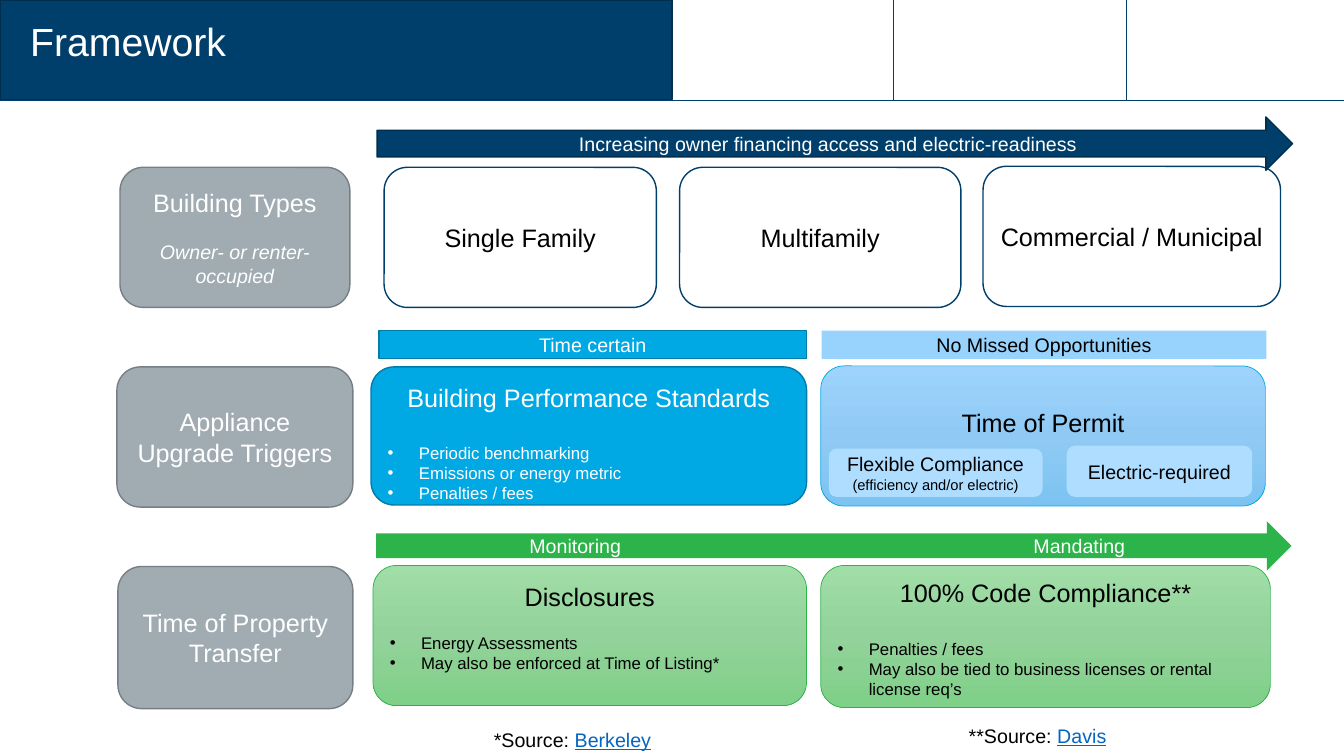
import copy

import lxml.etree
import pptx
import pptx.dml.color
import pptx.enum.shapes
import pptx.enum.text
import pptx.oxml.ns
import pptx.util

Inches = pptx.util.Inches
Pt = pptx.util.Pt
RGBColor = pptx.dml.color.RGBColor
KIND = pptx.enum.shapes.MSO_SHAPE
ALIGN = pptx.enum.text.PP_ALIGN
ANCHOR = pptx.enum.text.MSO_ANCHOR
qn = pptx.oxml.ns.qn

WHITE = RGBColor(0xFF, 0xFF, 0xFF)
BLACK = RGBColor(0x00, 0x00, 0x00)
NAVY = RGBColor(0x00, 0x3E, 0x6B)
DARK = RGBColor(0x00, 0x2E, 0x4F)
GREY = RGBColor(0xA1, 0xAB, 0xB2)
SLATE = RGBColor(0x77, 0x7F, 0x84)
BLUE = RGBColor(0x00, 0xA8, 0xE4)
TEAL = RGBColor(0x00, 0x7C, 0xA9)
SKY = RGBColor(0x98, 0xD3, 0xFD)
PALE = RGBColor(0xAE, 0xDD, 0xFF)
GREEN = RGBColor(0x2C, 0xB3, 0x4A)
LINK = RGBColor(0x05, 0x63, 0xC1)
LEAVES = [RGBColor(0xA0, 0xDD, 0xA7), RGBColor(0x93, 0xD2, 0x9A), RGBColor(0x7F, 0xD0, 0x88)]
SKIES = [RGBColor(0x9D, 0xD3, 0xFC), RGBColor(0x90, 0xCA, 0xF4), RGBColor(0x7C, 0xC3, 0xF2)]


def say(para, text, size=18, color=BLACK, align=ALIGN.CENTER, gap=0,
        bullet=False, italic=False, under=False):
    """Add a run of text to a paragraph and format both."""
    if bullet:
        props = para._p.get_or_add_pPr()
        props.set("marL", str(Inches(0.31)))
        props.set("indent", str(-Inches(0.31)))
        lxml.etree.SubElement(props, qn("a:buFont")).set("typeface", "Arial")
        lxml.etree.SubElement(props, qn("a:buChar")).set("char", "•")
    para.alignment = align
    para.space_before = Pt(gap)
    run = para.add_run()
    run.text = text
    font = run.font
    font.name, font.size, font.color.rgb = "Arial", Pt(size), color
    font.italic, font.underline = italic, under


def blend(fill, colors):
    """Fill from top to bottom through three colours."""
    fill.gradient()
    fill.gradient_angle = 270
    first = fill.gradient_stops[0]._gs
    first.addnext(copy.deepcopy(first))
    for i, (stop, color) in enumerate(zip(fill.gradient_stops, colors)):
        stop.position = i / 2
        stop.color.rgb = color


def draw(shapes, kind, box, fill, line=None, width=1, pad=0.1, top=None):
    """Add a shape; a top inset anchors its text to the top."""
    shape = shapes.add_shape(kind, *map(Inches, box))
    shape.shadow.inherit = False
    if isinstance(fill, list):
        blend(shape.fill, fill)
    else:
        shape.fill.solid()
        shape.fill.fore_color.rgb = fill
    if line is None:
        shape.line.fill.background()
    else:
        shape.line.color.rgb = line
        shape.line.width = Pt(width)
    frame = shape.text_frame
    frame.word_wrap = True
    frame.margin_left = frame.margin_right = Inches(pad)
    frame.margin_top, frame.margin_bottom = Inches(top or 0), 0
    frame.vertical_anchor = ANCHOR.MIDDLE if top is None else ANCHOR.TOP
    return shape


def label(shapes, kind, box, text, fill, line=None, color=WHITE, size=18, **look):
    """Add a shape with one centred text."""
    shape = draw(shapes, kind, box, fill, line, **look)
    say(shape.text_frame.paragraphs[0], text, size=size, color=color)
    return shape


def rule(shapes, start, end):
    line = shapes.add_connector(pptx.enum.shapes.MSO_CONNECTOR.STRAIGHT,
                                *map(Inches, start + end))
    line.line.color.rgb = NAVY
    line.line.width = Pt(0.5)
    lxml.etree.SubElement(line._element.spPr, qn("a:effectLst"))


def header(slide, box):
    x, y, w, h = box
    base = y + h
    rule(slide.shapes, (x, base), (x + w, base))
    for mark in (8.86, 11.17):
        rule(slide.shapes, (x + mark, y), (x + mark, base))
    band = draw(slide.shapes, KIND.RECTANGLE, (x, y, w / 2, h - 0.01), NAVY, DARK)
    # Title sits in front of its band
    title = slide.shapes.title
    title._element.addprevious(band._element)
    title.left, title.top = Inches(x + 0.2), Inches(y + 0.17)
    title.width, title.height = Inches(6.43), Inches(0.7)
    title.text_frame.vertical_anchor = ANCHOR.TOP
    para = title.text_frame.paragraphs[0]
    para.line_spacing = 0.9
    say(para, "Framework", size=28, color=WHITE, align=ALIGN.LEFT)


def types(shapes, box):
    x, y, w, h = box
    # Row name
    name = label(shapes, KIND.ROUNDED_RECTANGLE, (x, y + 0.5, 2.28, 1.39),
                 "Building Types", GREY, SLATE)
    say(name.text_frame.add_paragraph(), "Owner- or renter-occupied",
        size=14, color=WHITE, gap=16, italic=True)
    # Kinds of building
    for text, dx, dy, wide in (("Single Family", 2.62, 0.5, 2.7),
                               ("Multifamily", 5.55, 0.5, 2.79),
                               ("Commercial / Municipal", 8.56, 0.49, 2.95)):
        label(shapes, KIND.ROUNDED_RECTANGLE, (x + dx, y + dy, wide, 1.39),
              text, WHITE, NAVY, color=BLACK, pad=0.05)
    # Trend arrow
    label(shapes, KIND.RIGHT_ARROW, (x + 2.55, y, w - 2.55, 0.53),
          "Increasing owner financing access and electric-readiness",
          NAVY, DARK, size=14)


def card(shapes, box, title, points, fill, line, color=BLACK, gap=21, **look):
    """Add a rounded card with a title and a bullet list."""
    shape = label(shapes, KIND.ROUNDED_RECTANGLE, box, title, fill, line, color=color, **look)
    for i, point in enumerate(points):
        say(shape.text_frame.add_paragraph(), point, size=12, color=color,
            align=ALIGN.LEFT, gap=0 if i else gap, bullet=True)


def triggers(shapes, box):
    x, y, w, h = box
    label(shapes, KIND.ROUNDED_RECTANGLE, (x, y + 0.36, 2.34, 1.39),
          "Appliance Upgrade Triggers", GREY, SLATE)
    # Standards
    card(shapes, (x + 2.52, y + 0.36, 4.32, 1.37), "Building Performance Standards",
         ["Periodic benchmarking", "Emissions or energy metric", "Penalties / fees"],
         BLUE, TEAL, color=WHITE, top=0.09)
    label(shapes, KIND.RECTANGLE, (x + 2.6, y, 4.24, 0.28), "Time certain",
          BLUE, TEAL, size=14)
    # Permit
    label(shapes, KIND.RECTANGLE, (x + 6.99, y, 4.41, 0.28), "No Missed Opportunities",
          SKY, color=BLACK, size=14)
    group = shapes.add_group_shape().shapes
    label(group, KIND.ROUNDED_RECTANGLE, (x + 6.98, y + 0.35, 4.41, 1.39), "Time of Permit",
          SKIES, BLUE, color=BLACK, width=0.5, top=0.34)
    flex = label(group, KIND.ROUNDED_RECTANGLE, (x + 7.06, y + 1.17, 2.12, 0.48),
                 "Flexible Compliance", PALE, color=BLACK, size=14)
    say(flex.text_frame.add_paragraph(), "(efficiency and/or electric)", size=10.5)
    label(group, KIND.ROUNDED_RECTANGLE, (x + 9.42, y + 1.14, 1.84, 0.51),
          "Electric-required", PALE, color=BLACK, size=14)


def transfer(shapes, box):
    x, y, w, h = box
    label(shapes, KIND.ROUNDED_RECTANGLE, (x, y + 0.45, 2.33, 1.41),
          "Time of Property Transfer", GREY, SLATE)
    card(shapes, (x + 2.53, y + 0.44, 4.3, 1.39), "Disclosures",
         ["Energy Assessments", "May also be enforced at Time of Listing*"],
         LEAVES, GREEN, gap=15, width=0.5, top=0.09)
    card(shapes, (x + 6.97, y + 0.44, 4.46, 1.41), "100% Code Compliance**",
         ["Penalties / fees", "May also be tied to business licenses or rental license req’s"],
         LEAVES, GREEN, gap=22, width=0.5, top=0.05)
    # Arrow with two words on a tab stop
    arrow = draw(shapes, KIND.RIGHT_ARROW, (x + 2.56, y, w - 2.56, 0.49), GREEN)
    frame = arrow.text_frame
    frame.margin_left = Inches(1.52)
    para = frame.paragraphs[0]
    tabs = lxml.etree.SubElement(para._p.get_or_add_pPr(), qn("a:tabLst"))
    tab = lxml.etree.SubElement(tabs, qn("a:tab"))
    tab.set("pos", str(Inches(5)))
    tab.set("algn", "l")
    say(para, "Monitoring\tMandating", size=14, color=WHITE, align=ALIGN.LEFT)


def source(shapes, box, mark, place):
    frame = shapes.add_textbox(*map(Inches, box)).text_frame
    frame.word_wrap = True
    para = frame.paragraphs[0]
    say(para, mark + "Source: ", size=14, align=ALIGN.LEFT)
    say(para, place, size=14, color=LINK, align=ALIGN.LEFT, under=True)


def main():
    deck = pptx.Presentation()
    deck.slide_width, deck.slide_height = Inches(13.33), Inches(7.5)
    slide = deck.slides.add_slide(deck.slide_layouts[5])
    shapes = slide.shapes
    header(slide, (0, 0, 13.33, 1))
    types(shapes, (1.19, 1.16, 11.63, 1.89))
    triggers(shapes, (1.16, 3.28, 11.4, 1.75))
    transfer(shapes, (1.17, 5.17, 11.64, 1.86))
    source(shapes, (4.8, 7.17, 2.46, 0.33), "*", "Berkeley")
    source(shapes, (9.51, 7.13, 2.46, 0.33), "**", "Davis")
    deck.save("out.pptx")


if __name__ == "__main__":
    main()
